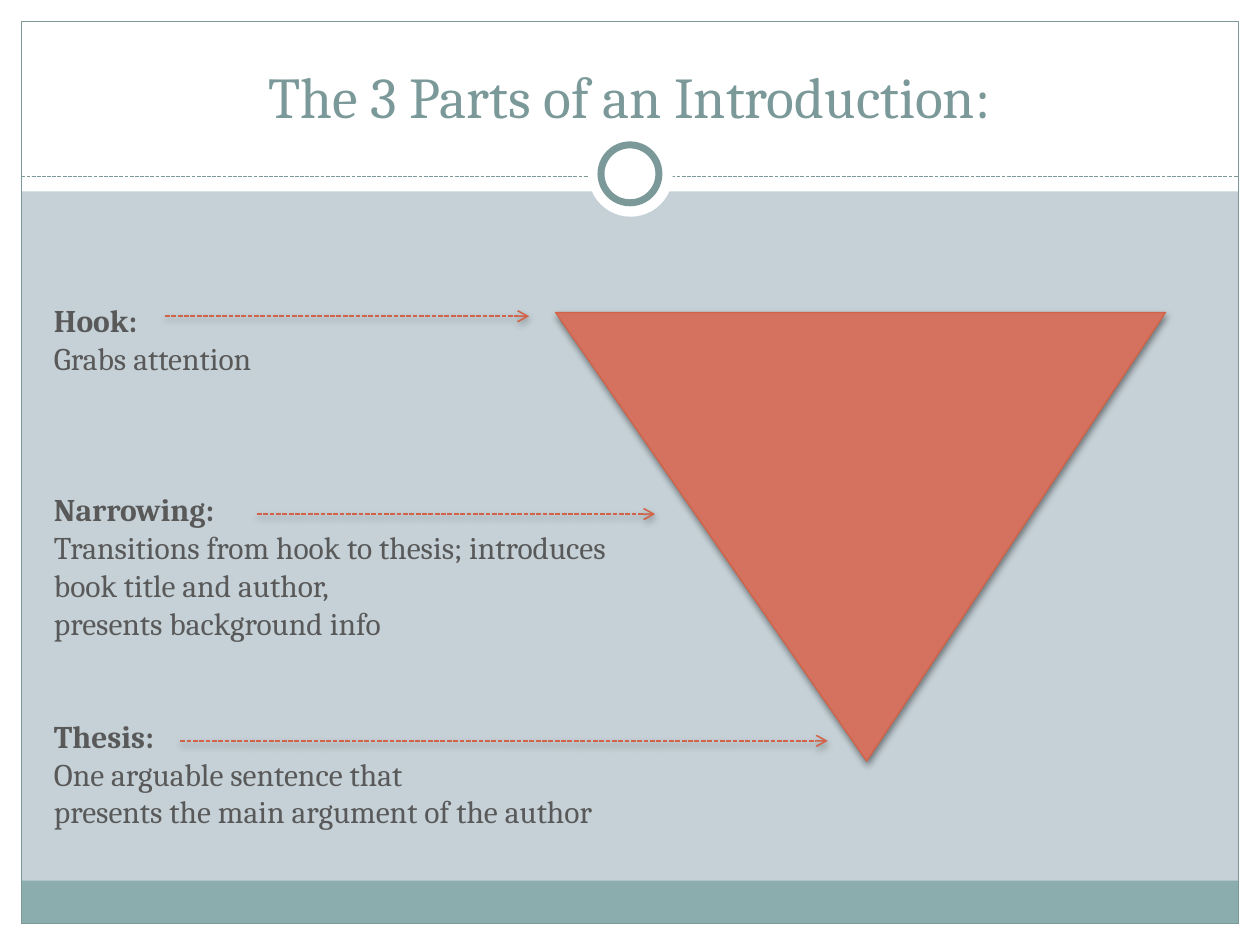
from dataclasses import dataclass

import lxml.etree
import pptx
import pptx.dml.color
import pptx.enum.dml
import pptx.enum.shapes
import pptx.enum.text
import pptx.oxml.ns
import pptx.util

RGBColor = pptx.dml.color.RGBColor
Shapes = pptx.enum.shapes.MSO_SHAPE
Align = pptx.enum.text.PP_ALIGN
Anchor = pptx.enum.text.MSO_ANCHOR

EMU_PER_PX = 9144
WIDTH, HEIGHT = 1000, 750
MARGIN = 17
HEADER_HEIGHT = 152
RULE_Y = 140
FONT = "Cambria"

WHITE = RGBColor(0xFF, 0xFF, 0xFF)
MIST = RGBColor(0xC5, 0xD1, 0xD7)
TEAL = RGBColor(0x8C, 0xAD, 0xAE)
SLATE = RGBColor(0x7C, 0x99, 0x9A)
CORAL = RGBColor(0xD4, 0x72, 0x5F)
RUST = RGBColor(0xD1, 0x63, 0x49)
GRAY = RGBColor(0x59, 0x59, 0x59)


@dataclass(frozen=True)
class Box:
    left: int
    top: int
    width: int
    height: int


@dataclass(frozen=True)
class Part:
    heading: str
    lines: tuple[str, ...]
    space_before: int
    arrow_start: int
    arrow_end: int
    arrow_y: int


PARTS = (
    Part("Hook:", ("Grabs attention",), 0, 131, 420, 251),
    Part(
        "Narrowing:",
        (
            "Transitions from hook to thesis; introduces book title and author,",
            "presents background info",
        ),
        65, 204, 520, 408,
    ),
    Part(
        "Thesis:",
        ("One arguable sentence that", "presents the main argument of the author"),
        43, 143, 657, 588,
    ),
)


def px(length: int) -> pptx.util.Emu:
    return pptx.util.Emu(length * EMU_PER_PX)


def place(box: Box) -> tuple[pptx.util.Emu, ...]:
    return px(box.left), px(box.top), px(box.width), px(box.height)


def add_effects(item, shadow_percent: int = 0) -> None:
    properties = item._element.spPr
    effects = lxml.etree.SubElement(properties, pptx.oxml.ns.qn("a:effectLst"))
    if shadow_percent:
        shadow = lxml.etree.SubElement(
            effects, pptx.oxml.ns.qn("a:outerShdw"),
            blurRad="50800", dist="25400", dir="5400000", rotWithShape="0",
        )
        color = lxml.etree.SubElement(shadow, pptx.oxml.ns.qn("a:srgbClr"), val="000000")
        lxml.etree.SubElement(
            color, pptx.oxml.ns.qn("a:alpha"), val=str(shadow_percent * 1000)
        )


def add_shape(page, kind, box: Box, fill=None, line=None,
              line_width: float = 0.75, shadow_percent: int = 0):
    shape = page.shapes.add_shape(kind, *place(box))
    if fill is None:
        shape.fill.background()
    else:
        shape.fill.solid()
        shape.fill.fore_color.rgb = fill
    if line is None:
        shape.line.fill.background()
    else:
        shape.line.color.rgb = line
        shape.line.width = pptx.util.Pt(line_width)
    if shadow_percent:
        add_effects(shape, shadow_percent)
    else:
        shape.shadow.inherit = False
    return shape


def add_dashed_line(page, start: int, end: int, y: int, color, width: float,
                    arrow: bool = False, shadow_percent: int = 0) -> None:
    line = page.shapes.add_connector(
        pptx.enum.shapes.MSO_CONNECTOR.STRAIGHT, px(start), px(y), px(end), px(y)
    )
    line.line.color.rgb = color
    line.line.width = pptx.util.Pt(width)
    line.line.dash_style = pptx.enum.dml.MSO_LINE.SQUARE_DOT
    outline = line.line._get_or_add_ln()
    outline.find(pptx.oxml.ns.qn("a:prstDash")).set("val", "sysDash")
    if arrow:
        lxml.etree.SubElement(outline, pptx.oxml.ns.qn("a:tailEnd"), type="arrow")
    add_effects(line, shadow_percent)


def add_text_frame(page, box: Box, anchor):
    frame = page.shapes.add_textbox(*place(box)).text_frame
    frame.word_wrap = True
    frame.vertical_anchor = anchor
    return frame


def write(para, text: str, *, size: int = 18, color=GRAY, bold: bool = False,
          align=Align.LEFT, space_before: int = 0) -> None:
    para.alignment = align
    para.space_before = pptx.util.Pt(space_before)
    span = para.add_run()
    span.text = text
    span.font.name = FONT
    span.font.size = pptx.util.Pt(size)
    span.font.bold = bold
    span.font.color.rgb = color


def draw_frame(page) -> None:
    inner = Box(MARGIN, MARGIN, WIDTH - 2 * MARGIN, HEIGHT - 2 * MARGIN)
    for border in (
        Box(0, HEIGHT - MARGIN, WIDTH, MARGIN),
        Box(0, 0, WIDTH, HEADER_HEIGHT),
        Box(0, 0, MARGIN, HEIGHT),
        Box(WIDTH - MARGIN, 0, MARGIN, HEIGHT),
    ):
        add_shape(page, Shapes.RECTANGLE, border, WHITE)
    add_shape(page, Shapes.RECTANGLE, Box(MARGIN, 699, inner.width, 34), TEAL)
    add_shape(page, Shapes.RECTANGLE, inner, line=SLATE)
    add_dashed_line(page, MARGIN, WIDTH - MARGIN, RULE_Y, SLATE, 0.75)
    add_shape(page, Shapes.OVAL, Box(467, 105, 67, 67), WHITE)
    add_shape(page, Shapes.OVAL, Box(477, 115, 46, 46), WHITE, SLATE, 4)


def draw_parts(page) -> None:
    triangle = add_shape(page, Shapes.ISOSCELES_TRIANGLE, Box(441, 248, 484, 356),
                         CORAL, RUST, shadow_percent=45)
    triangle.rotation = 180
    triangle.adjustments[0] = 0.49
    frame = add_text_frame(page, Box(33, 234, 484, 434), Anchor.TOP)
    for index, part in enumerate(PARTS):
        heading = frame.add_paragraph() if index else frame.paragraphs[0]
        write(heading, part.heading, bold=True, space_before=part.space_before)
        for line in part.lines:
            write(frame.add_paragraph(), line)
    for part in PARTS:
        add_dashed_line(page, part.arrow_start, part.arrow_end, part.arrow_y,
                        RUST, 0.9, arrow=True, shadow_percent=35)


def main() -> None:
    deck = pptx.Presentation()
    deck.slide_width, deck.slide_height = px(WIDTH), px(HEIGHT)
    page = deck.slides.add_slide(deck.slide_layouts[6])
    page.background.fill.solid()
    page.background.fill.fore_color.rgb = MIST
    draw_frame(page)
    title = add_text_frame(page, Box(33, 25, 933, 83), Anchor.BOTTOM)
    write(title.paragraphs[0], "The 3 Parts of an Introduction:",
          size=33, color=SLATE, align=Align.CENTER)
    draw_parts(page)
    deck.save("out.pptx")


if __name__ == "__main__":
    main()
